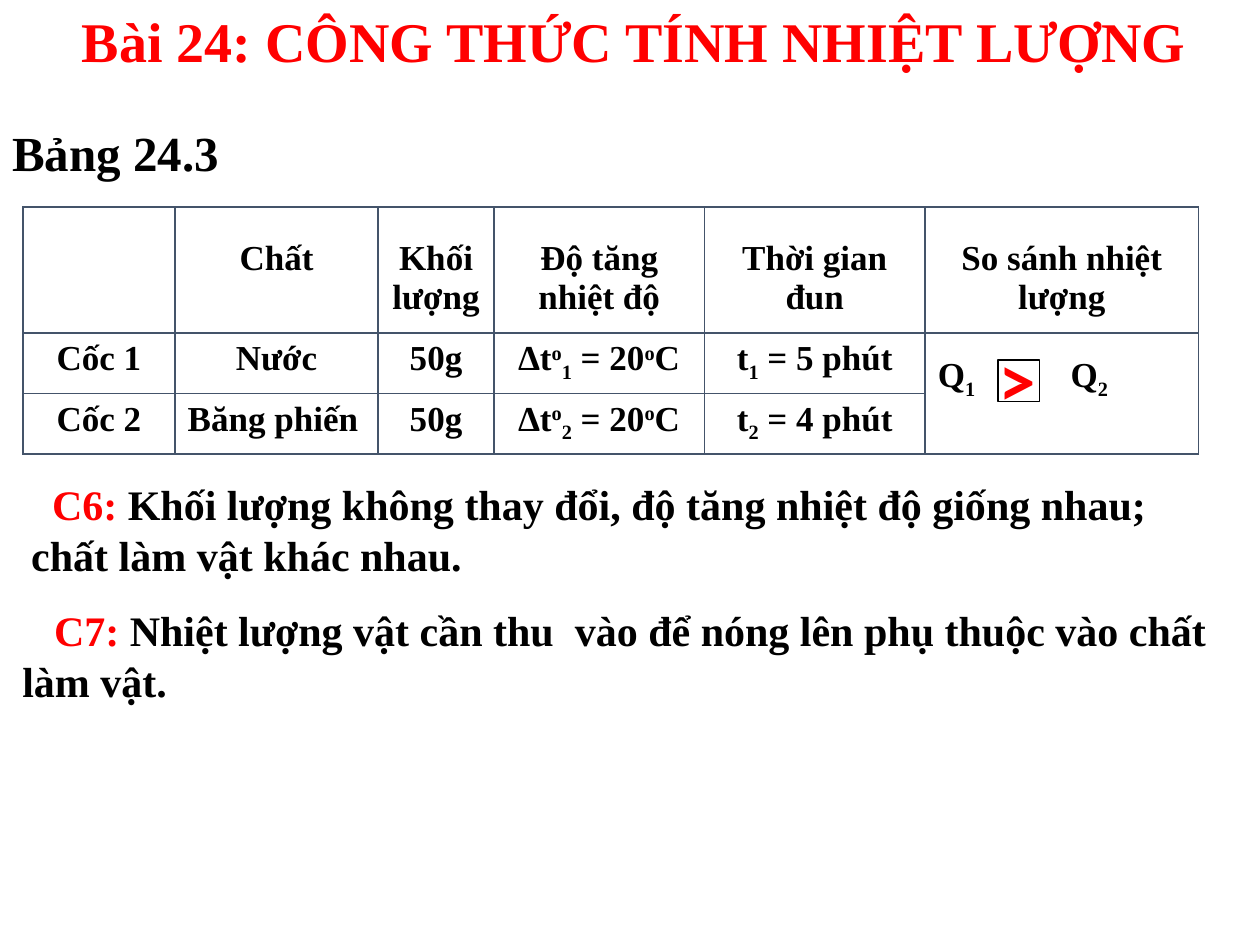
import pptx
import pptx.dml.color
import pptx.enum.shapes
import pptx.enum.text
import pptx.oxml.ns
import pptx.util
from lxml import etree
from pptx.util import Cm

RED = pptx.dml.color.RGBColor(0xFF, 0x00, 0x00)
BLACK = pptx.dml.color.RGBColor(0x00, 0x00, 0x00)
BORDER = pptx.dml.color.RGBColor(0x44, 0x54, 0x6A)
LEFT = pptx.enum.text.PP_ALIGN.LEFT
CENTER = pptx.enum.text.PP_ALIGN.CENTER
SUPERSCRIPT, SUBSCRIPT = 30000, -25000


def add_child(parent, tag, **attributes):
    return etree.SubElement(parent, pptx.oxml.ns.qn(tag), attributes)


class LessonSlide:
    body_font = "Times New Roman"
    symbol_font = "Lato"
    table_size = 20

    def __init__(self, slide):
        self.slide = slide

    def add_run(self, paragraph, text, size, color=BLACK, font=None, baseline=0):
        run = paragraph.add_run()
        run.text = text
        run.font.name = font or self.body_font
        run.font.size = pptx.util.Pt(size)
        run.font.bold = True
        run.font.color.rgb = color
        if baseline:
            run.font._element.set("baseline", str(baseline))

    def add_text(self, left, top, width, height, runs, size, indent=0, margin=0.25):
        """Add a one-paragraph box from (text, color) runs; indent is for its first line."""
        box = self.slide.shapes.add_textbox(Cm(left), Cm(top), Cm(width), Cm(height))
        frame = box.text_frame
        frame.word_wrap = True
        frame.margin_left = Cm(margin)
        paragraph = frame.paragraphs[0]
        if indent:
            paragraph._p.get_or_add_pPr().set("indent", str(Cm(indent)))
        for text, color in runs:
            self.add_run(paragraph, text, size, color)

    def add_symbol(self, left, top, width, height, text, size):
        box = self.slide.shapes.add_textbox(Cm(left), Cm(top), Cm(width), Cm(height))
        frame = box.text_frame
        frame.word_wrap = True
        frame.margin_left = frame.margin_right = frame.margin_top = frame.margin_bottom = 0
        frame.paragraphs[0].alignment = CENTER
        self.add_run(frame.paragraphs[0], text, size, RED, self.symbol_font)

    def add_outline_box(self, left, top, side):
        shape = self.slide.shapes.add_shape(
            pptx.enum.shapes.MSO_SHAPE.RECTANGLE, Cm(left), Cm(top), Cm(side), Cm(side))
        shape.shadow.inherit = False
        shape.fill.background()
        shape.line.color.rgb = BLACK
        shape.line.width = pptx.util.Pt(0.75)

    def add_table(self, left, top, widths, heights):
        frame = self.slide.shapes.add_table(
            len(heights), len(widths), Cm(left), Cm(top), Cm(sum(widths)), Cm(sum(heights)))
        table = frame.table
        table.first_row = table.horz_banding = False
        for column, width in zip(table.columns, widths):
            column.width = Cm(width)
        for row, height in zip(table.rows, heights):
            row.height = Cm(height)
        for cell in table.iter_cells():
            self.style_cell(cell)
        return table

    def style_cell(self, cell):
        properties = cell._tc.get_or_add_tcPr()
        for side in ("a:lnL", "a:lnR", "a:lnT", "a:lnB"):
            line = add_child(properties, side, w=str(pptx.util.Pt(1)))
            add_child(add_child(line, "a:solidFill"), "a:srgbClr", val=str(BORDER))
        cell.fill.background()

    def fill_cell(self, cell, lines, alignment=CENTER, margin_top=0.13, tab=None):
        """Write lines of (text, baseline) runs, one paragraph per line."""
        cell.margin_top = Cm(margin_top)
        frame = cell.text_frame
        for index, runs in enumerate(lines):
            paragraph = frame.add_paragraph() if index else frame.paragraphs[0]
            if tab:
                stops = add_child(paragraph._p.get_or_add_pPr(), "a:tabLst")
                add_child(stops, "a:tab", pos=str(Cm(tab)), algn="l")
            paragraph.alignment = alignment
            for text, baseline in runs:
                self.add_run(paragraph, text, self.table_size, baseline=baseline)


def plain(*lines):
    return [[(line, 0)] for line in lines]


def main():
    presentation = pptx.Presentation()
    presentation.slide_width, presentation.slide_height = Cm(25.4), Cm(19.05)
    lesson = LessonSlide(presentation.slides.add_slide(presentation.slide_layouts[6]))

    lesson.add_symbol(19.89, 6.81, 1.27, 1.7, ">", 40)

    table = lesson.add_table(
        0.46, 4.17, [3.07, 4.09, 2.34, 4.24, 4.45, 5.51], [2.54, 1.22, 1.22])
    headers = [["Chất"], ["Khối lượng"], ["Độ tăng", "nhiệt độ"],
               ["Thời gian", "đun"], ["So sánh nhiệt lượng"]]
    for column, lines in enumerate(headers, start=1):
        lesson.fill_cell(table.cell(0, column), plain(*lines), margin_top=0.66)

    cups = [("Nước", CENTER, 5), ("Băng phiến", LEFT, 4)]
    for number, (substance, alignment, minutes) in enumerate(cups, start=1):
        index = (str(number), SUBSCRIPT)
        degree = ("o", SUPERSCRIPT)
        temperature = [("∆t", 0), degree, index, (" = 20", 0), degree, ("C", 0)]
        time = [("t", 0), index, (f" = {minutes} phút", 0)]
        lesson.fill_cell(table.cell(number, 0), plain(f"Cốc {number}"))
        lesson.fill_cell(table.cell(number, 1), plain(substance), alignment)
        lesson.fill_cell(table.cell(number, 2), plain("50g"))
        lesson.fill_cell(table.cell(number, 3), [temperature])
        lesson.fill_cell(table.cell(number, 4), [time])

    comparison = table.cell(1, 5)
    comparison.merge(table.cell(2, 5))
    heat = [("Q", 0), ("1", SUBSCRIPT), ("\tQ", 0), ("2", SUBSCRIPT)]
    lesson.fill_cell(comparison, [heat], LEFT, margin_top=0.48, tab=2.68)

    lesson.add_text(0, 2.34, 12.5, 1.45, [("Bảng 24.3", BLACK)], 28)
    lesson.add_text(0, 0, 25.4, 1.6,
                    [("Bài 24: CÔNG THỨC TÍNH NHIỆT LƯỢNG", RED)], 32, margin=1.65)
    lesson.add_outline_box(20.12, 7.26, 0.84)
    lesson.add_text(0.38, 9.53, 24.59, 2.29, [
        ("C6: ", RED),
        ("Khối lượng không thay đổi, độ tăng nhiệt độ giống nhau; "
         "chất làm vật khác nhau.", BLACK)], 24, indent=0.42)
    lesson.add_text(0.2, 12.07, 24.59, 2.29, [
        ("C7:", RED),
        (" Nhiệt lượng vật cần thu  vào để nóng lên phụ thuộc vào chất "
         "làm vật.", BLACK)], 24, indent=0.64)

    presentation.save("out.pptx")


if __name__ == "__main__":
    main()
